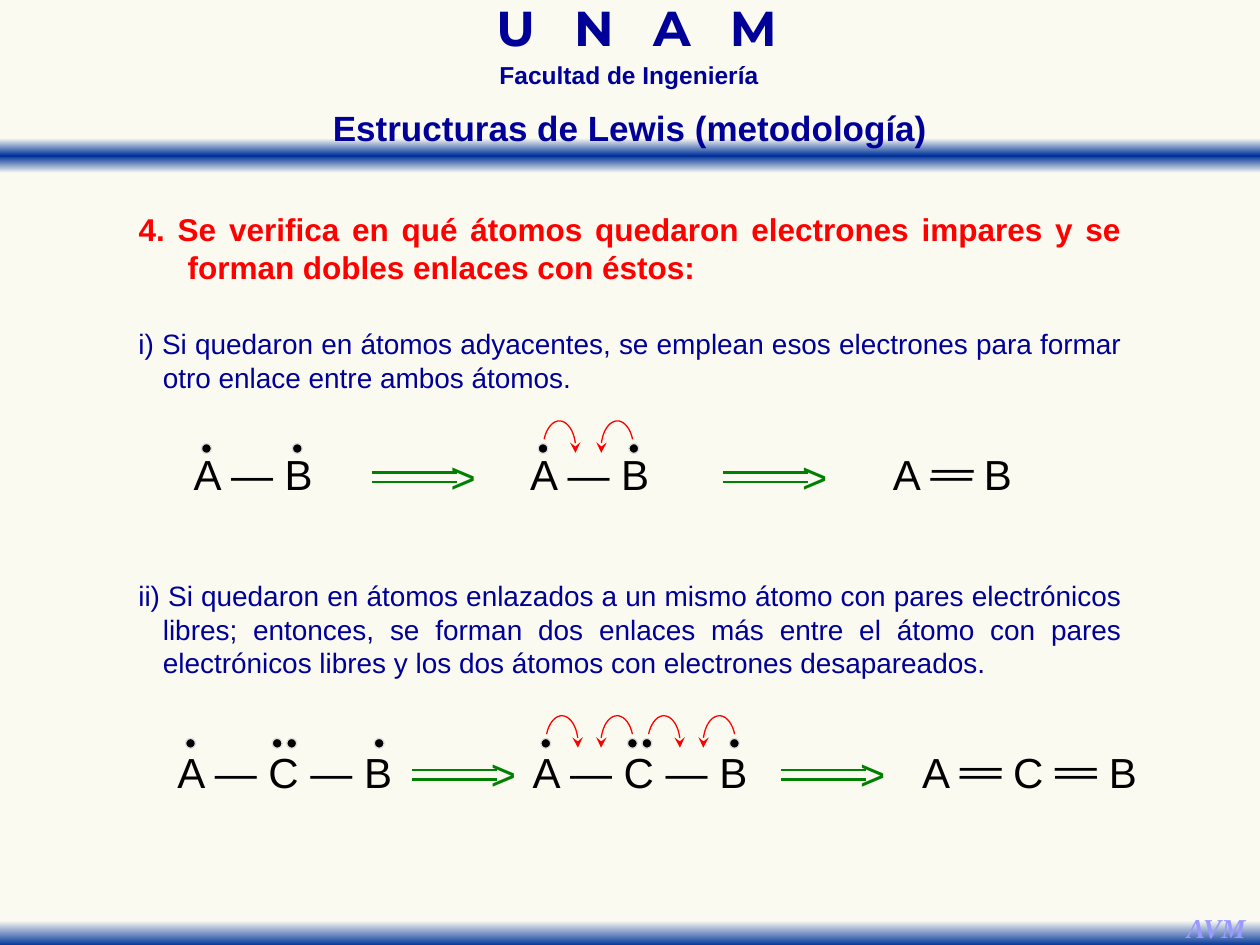
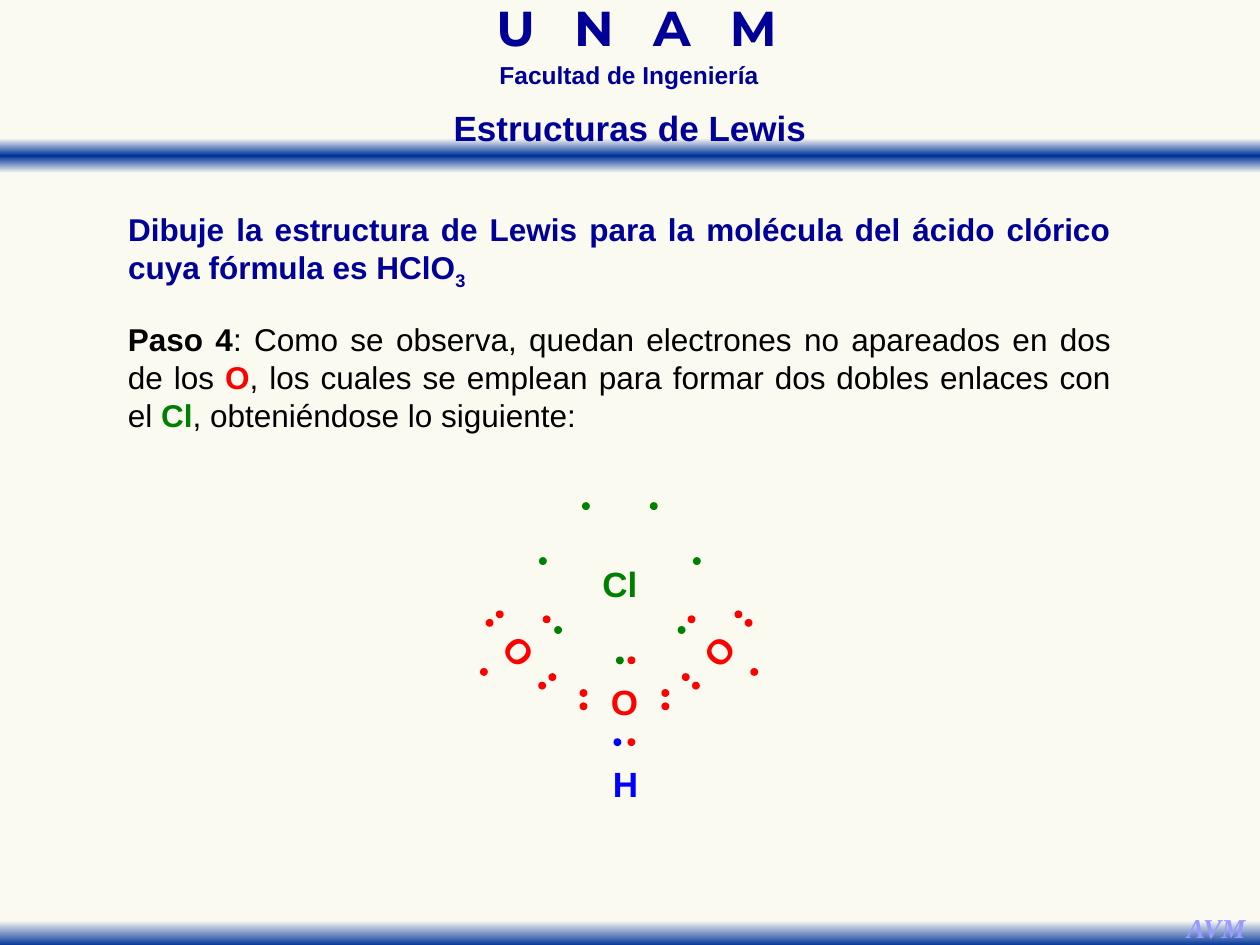
import math
from copy import deepcopy

from pptx import Presentation
from pptx.dml.color import RGBColor
from pptx.enum import shapes, text
from pptx.oxml import ns
from pptx.util import Pt

NAVY, RED, GREEN, BLUE, BLACK = "000099", "FF0000", "008000", "0000FF", "000000"
BACKGROUND, BAND_LIGHT, BAND_DARK = "FAFAF0", "FAFAF2", "003399"
CENTER, JUSTIFY = text.PP_ALIGN.CENTER, text.PP_ALIGN.JUSTIFY
LEFT = text.PP_ALIGN.LEFT


def color(hex_string):
    return RGBColor.from_string(hex_string)


def place(shape, left, top, width, height):
    shape.left, shape.top = Pt(left), Pt(top)
    shape.width, shape.height = Pt(width), Pt(height)


def write(shape, runs, size, align=CENTER, font="Arial", hanging=0, inset=None,
          wrap=True, anchor=text.MSO_ANCHOR.TOP):
    """Fill a shape with one paragraph; each run is (text, colour, bold)."""
    frame = shape.text_frame
    frame.auto_size = text.MSO_AUTO_SIZE.NONE
    frame.word_wrap, frame.vertical_anchor = wrap, anchor
    if inset is not None:
        frame.margin_left = frame.margin_right = Pt(inset)
        frame.margin_top = frame.margin_bottom = Pt(inset)
    paragraph = frame.paragraphs[0]
    properties = paragraph._p.get_or_add_pPr()
    properties.set("marL", str(Pt(hanging)))
    properties.set("indent", str(-Pt(hanging)))
    properties.append(properties.makeelement(ns.qn("a:buNone"), {}))
    paragraph.alignment, paragraph.space_before = align, Pt(0)
    for content, hex_string, bold in runs:
        run = paragraph.add_run()
        run.text = content
        run.font.name, run.font.size, run.font.bold = font, Pt(size), bold
        run.font.color.rgb = color(hex_string)
    return paragraph


def add_text(parent, box, runs, size, **style):
    shape = parent.shapes.add_textbox(*map(Pt, box))
    return shape, write(shape, runs, size, **style)


def add_dot(parent, x, y, diameter, hex_string, outline=None):
    """Draw an electron centred at x, y."""
    corner = Pt(x - diameter / 2), Pt(y - diameter / 2)
    dot = parent.shapes.add_shape(shapes.MSO_SHAPE.OVAL, *corner, Pt(diameter), Pt(diameter))
    dot.shadow.inherit = False
    dot.fill.solid()
    dot.fill.fore_color.rgb = color(hex_string)
    if outline:
        dot.line.color.rgb, dot.line.width = color(outline), Pt(0.75)
    else:
        dot.line.fill.background()


# Shared frame of every slide

def add_band(slide, top, stops):
    band = slide.shapes.add_shape(shapes.MSO_SHAPE.RECTANGLE, 0, Pt(top), Pt(720), Pt(20))
    band.shadow.inherit = False
    band.line.fill.background()
    band.fill.gradient()
    band.fill.gradient_angle = 270
    stop_list = band.element.spPr.find(".//" + ns.qn("a:gsLst"))
    while len(stop_list) < len(stops):
        stop_list.append(deepcopy(stop_list[-1]))
    for stop, (position, hex_string) in zip(band.fill.gradient_stops, stops):
        stop.position, stop.color.rgb = position, color(hex_string)
    return band


def build_master(master, slide):
    """Draw the shared frame on the slide and move it to the master."""
    master.background.fill.solid()
    master.background.fill.fore_color.rgb = color(BACKGROUND)
    header = add_band(slide, 79, [(0, BAND_LIGHT), (0.5, BAND_DARK), (1, BAND_LIGHT)])
    university, name_line = add_text(slide, (223, 4.5, 281.5, 31), [("U N A M", NAVY, True)],
                                     28, font="Montserrat")
    name_line.runs[0]._r.get_or_add_rPr().set("spc", "730")
    faculty, faculty_line = add_text(slide, (231, 35.5, 257, 19.5),
                                     [("Facultad de Ingeniería", NAVY, True)], 14)
    name_line.line_spacing = faculty_line.line_spacing = 0.7
    footer = add_band(slide, 520.5, [(0.28, BAND_LIGHT), (1, BAND_DARK)])
    initials, initials_line = add_text(slide, (670.5, 517, 49, 26.5), [("AVM", "9999FF", True)],
                                       15.6, font="Times New Roman", wrap=False)
    initials_line.runs[0].font.italic = True
    for number, shape in enumerate((header, university, faculty, footer, initials), 100):
        shape.element.nvSpPr.cNvPr.set("id", str(number))
        master.element.cSld.spTree.append(shape.element)


def write_title(slide, title, width):
    place(slide.shapes.title, 360 - width / 2, 57, width, 32)
    write(slide.shapes.title, [(title, NAVY, True)], 20, wrap=False)


def write_statement(slide, left, runs, hanging=0):
    body = slide.placeholders[1]
    place(body, left, 116.5, 576, 50.5)
    return write(body, runs, 18, align=JUSTIFY, hanging=hanging)


# Bond diagrams

def add_molecule(slide, left, top, formula, width, dots=(), lift=0, double_bonds=()):
    group = slide.shapes.add_group_shape()
    style = dict(inset=1.5, wrap=False)
    add_text(group, (left, top, width, 31.5), [(formula, BLACK, False)], 24, **style)
    for x in double_bonds:
        add_text(group, (left + x, top - 4.7, 26.5, 31.5), [("―", BLACK, False)], 24, **style)
    for x in dots:
        add_dot(group, left + x, top + 2.8 - lift, 5.6, BLACK, "DDDDDD")


def add_double_arrow(slide, left, top):
    group = slide.shapes.add_group_shape()
    for y in (top, top + 5.4):
        line = group.shapes.add_connector(shapes.MSO_CONNECTOR.STRAIGHT, Pt(left), Pt(y),
                                          Pt(left + 48.6), Pt(y))
        line.line.color.rgb, line.line.width = color(GREEN), Pt(1.25)
        properties = line.element.spPr
        properties.append(properties.makeelement(ns.qn("a:effectLst"), {}))
    tip, _ = add_text(group, (left + 43.5, top - 13, 28, 30), [(">", GREEN, False)], 25,
                      align=LEFT, inset=0)
    tip.text_frame.margin_left = tip.text_frame.margin_right = Pt(1.5)


def add_electron_move(slide, left, top, side):
    """Draw an arched arrow whose head is on the left (-1) or the right (1)."""
    radius_x, radius_y = 9.3, 16
    angles = [math.radians(angle) for angle in range(172, 341, 8)]
    points = [(Pt(left + radius_x - side * radius_x * math.cos(angle)),
               Pt(top + radius_y + radius_y * math.sin(angle))) for angle in angles]
    builder = slide.shapes.build_freeform(*points[0])
    builder.add_line_segments(points[1:], close=False)
    arch = builder.convert_to_shape()
    arch.shadow.inherit = False
    arch.fill.background()
    arch.line.color.rgb, arch.line.width = color(RED), Pt(0.75)
    outline = arch.element.spPr.find(ns.qn("a:ln"))
    outline.append(outline.makeelement(ns.qn("a:headEnd"), {"type": "stealth"}))


def add_reaction(slide, top, formula, width, lefts, arrows, dots, lift, moves, double_bonds):
    """Draw a row: unpaired electrons, their moves, and the double bonds."""
    for left in lefts[:2]:
        add_molecule(slide, left, top, formula, width, dots, lift)
    add_molecule(slide, lefts[2], top, formula, width, double_bonds=double_bonds)
    for left in arrows:
        add_double_arrow(slide, left, top + 15)
    for index, x in enumerate(moves):
        add_electron_move(slide, lefts[1] + x, top - lift - 13, -1 if index % 2 else 1)


def build_method_slide(slide):
    write_title(slide, "Estructuras de Lewis (metodología)", 356)
    write_statement(slide, 72, [("4. Se verifica en qué átomos quedaron electrones impares y se "
                                 "forman dobles enlaces con éstos:", RED, True)], hanging=28)
    cases = [
        (183, 46, "i) Si quedaron en átomos adyacentes, se emplean esos electrones para formar "
         "otro enlace entre ambos átomos."),
        (327, 65.5, "ii) Si quedaron en átomos enlazados a un mismo átomo con pares electrónicos "
         "libres; entonces, se forman dos enlaces más entre el átomo con pares electrónicos "
         "libres y los dos átomos con electrones desapareados."),
    ]
    for top, height, case in cases:
        add_text(slide, (72, top, 576, height), [(case, NAVY, False)], 16,
                 align=JUSTIFY, hanging=14)
    add_reaction(slide, 255, "A ― B", 72, lefts=(108.7, 301, 508.3), arrows=(212.4, 413.3),
                 dots=(9.3, 61.2), lift=1.5, moves=(9.4, 42.5), double_bonds=(23,))
    add_reaction(slide, 425, "A ― C ― B", 126.7, lefts=(99.4, 302.4, 525), arrows=(235.4, 446.4),
                 dots=(9.5, 59, 67.3, 117.3), lift=3, moves=(9.4, 41, 67.7, 99.4),
                 double_bonds=(22.3, 76.5))


# Lewis structure

def add_symbol(group, x, y, symbol, hex_string, width=42.5, height=42.5):
    box = (x - width / 2, y - height / 2, width, height)
    shape, _ = add_text(group, box, [(symbol, hex_string, True)], 20, inset=0, wrap=False,
                        anchor=text.MSO_ANCHOR.MIDDLE)
    return shape


def add_oxygen(slide, x, y, rotation=0, side=1):
    """Draw an oxygen turned about its centre; side moves its two lone dots."""
    group = slide.shapes.add_group_shape()
    add_symbol(group, x, y, "O", RED).rotation = rotation % 360
    cosine, sine = math.cos(math.radians(rotation)), math.sin(math.radians(rotation))
    electrons = [(4 * side, -23.4), (4 * side, 23.4)]
    electrons += [(dx, dy) for dx in (-23.4, 23.4) for dy in (-4.7, 2.9)]
    for dx, dy in electrons:
        add_dot(group, x + dx * cosine - dy * sine, y + dx * sine + dy * cosine, 4.5, RED)


def add_chlorine(slide, x, y):
    group = slide.shapes.add_group_shape()
    add_symbol(group, x, y, "Cl", GREEN, 26, 30)
    add_dot(group, x, y + 44, 4.5, GREEN)
    for dx, dy in ((35.3, 26.6), (44, -12.8), (19.4, -44.2)):
        for side in (-1, 1):
            add_dot(group, x + side * dx, y + dy, 4.5, GREEN)


def add_hydrogen(slide, x, y):
    group = slide.shapes.add_group_shape()
    add_symbol(group, x, y, "H", BLUE)
    add_dot(group, x - 4.7, y - 23.4, 4.5, BLUE)


def build_example_slide(slide):
    write_title(slide, "Estructuras de Lewis", 224)
    statement = write_statement(slide, 66, [
        ("Dibuje la estructura de Lewis para la molécula del ácido clórico cuya fórmula es HClO",
         NAVY, True), ("3", NAVY, True)])
    statement.runs[1]._r.get_or_add_rPr().set("baseline", "-25000")
    add_text(slide, (66, 179.3, 576, 72.7), [
        ("Paso 4", BLACK, True),
        (": Como se observa, quedan electrones no apareados en dos de los ", BLACK, False),
        ("O", RED, True),
        (", los cuales se emplean para formar dos dobles enlaces con el ", BLACK, False),
        ("Cl", GREEN, True),
        (", obteniéndose lo siguiente:", BLACK, False)], 18, align=JUSTIFY)
    add_oxygen(slide, 297, 372, rotation=50, side=-1)
    add_chlorine(slide, 354.2, 333.4)
    add_oxygen(slide, 356.8, 400.7)
    add_oxygen(slide, 410.5, 372, rotation=-50)
    add_hydrogen(slide, 357.5, 447.5)


def main():
    presentation = Presentation()
    presentation.slide_width, presentation.slide_height = Pt(720), Pt(540)
    layout = presentation.slide_layouts[1]
    method, example = [presentation.slides.add_slide(layout) for _ in range(2)]
    build_master(presentation.slide_master, method)
    build_method_slide(method)
    build_example_slide(example)
    presentation.save("out.pptx")


if __name__ == "__main__":
    main()
